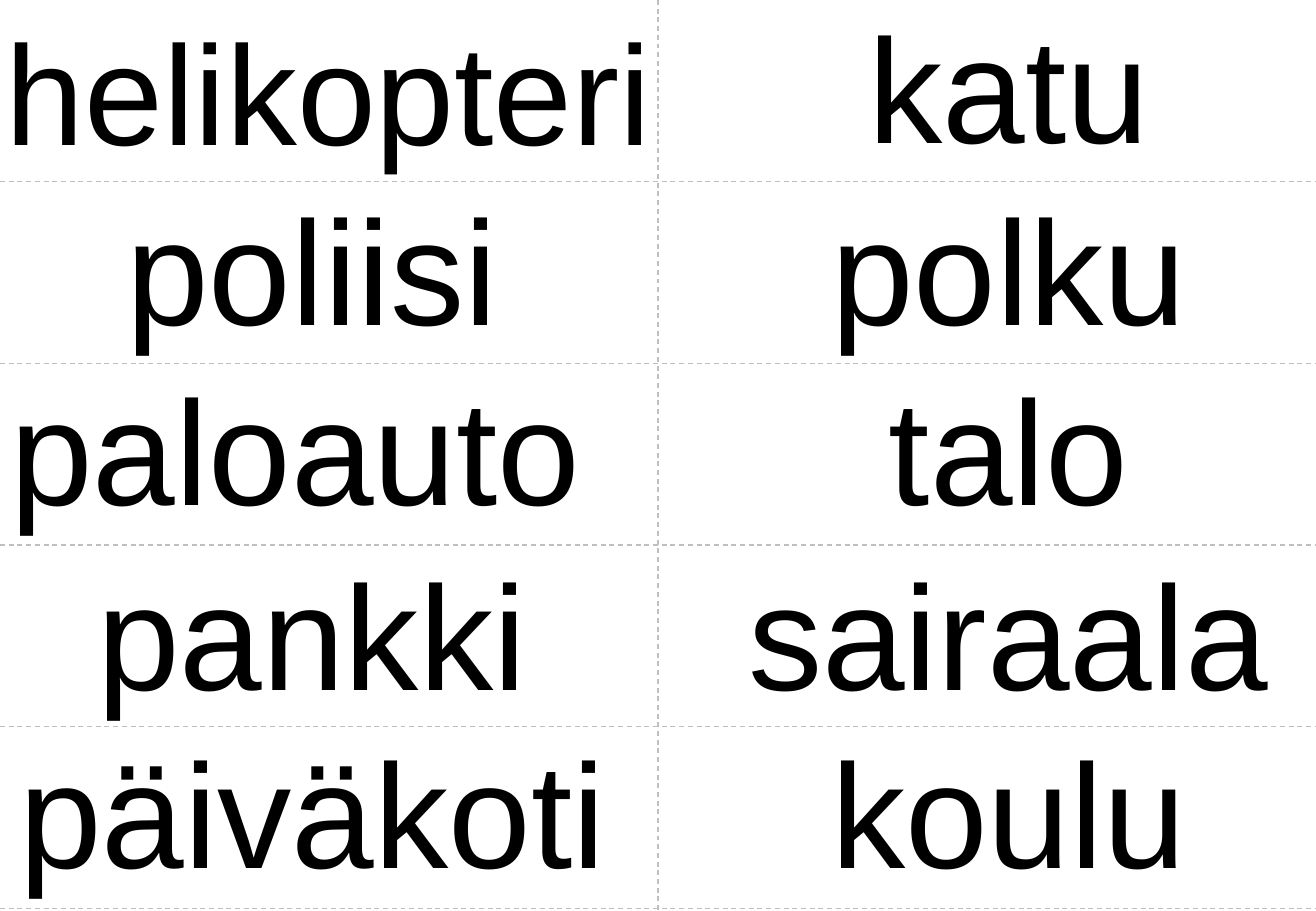
"""Build a sheet of ten Finnish word cards with dashed cutting lines."""
from typing import Any, NamedTuple

import pptx
import pptx.dml.color
import pptx.enum.dml
import pptx.enum.shapes
import pptx.enum.text
import pptx.oxml
import pptx.oxml.ns
import pptx.util

Inches = pptx.util.Inches

WIDE, HIGH = 10.83, 7.5
ROWS = 5
LAST = 7.48
TOPS = [-0.09, 1.41, 2.89, 4.41, 5.88]


class Card(NamedTuple):
    text: str
    left: float
    top: float
    width: float
    height: float = 1.48
    size: int = 88


class Cut(NamedTuple):
    x1: float
    y1: float
    x2: float
    y2: float


CARDS = [
    Card("helikopteri", -0.01, -0.02, 5.43, 1.41, 84),
    Card("poliisi", 0.98, TOPS[1], 3.17),
    Card("paloauto", 0.03, TOPS[2], 4.8),
    Card("pankki", 0.74, TOPS[3], 3.65),
    Card("päiväkoti", 0.1, TOPS[4], 4.94),
    Card("katu", 7.09, TOPS[0], 2.42),
    Card("polku", 6.78, TOPS[1], 3.04),
    Card("talo", 7.26, TOPS[2], 2.08),
    Card("sairaala", 6.1, TOPS[3], 4.39),
    Card("koulu", 6.78, TOPS[4], 3.04),
]
CUTS = [Cut(WIDE / 2, 0, WIDE / 2, HIGH)] + [
    Cut(0, LAST * row / ROWS, WIDE, LAST * row / ROWS)
    for row in range(1, ROWS + 1)
]


def paint(color: Any, tone: str) -> None:
    """Set a color format from a hex string."""
    color.rgb = pptx.dml.color.RGBColor.from_string(tone)


def add_card(slide: Any, card: Card) -> None:
    """Add one centred word."""
    box = slide.shapes.add_textbox(
        Inches(card.left), Inches(card.top),
        Inches(card.width), Inches(card.height))
    frame = box.text_frame
    frame.word_wrap = False
    frame.auto_size = pptx.enum.text.MSO_AUTO_SIZE.SHAPE_TO_FIT_TEXT
    frame.margin_left = frame.margin_right = Inches(0.05)
    frame.margin_top = frame.margin_bottom = Inches(0.05)
    para = frame.paragraphs[0]
    para.text = card.text
    para.alignment = pptx.enum.text.PP_ALIGN.CENTER
    para.font.name = "Arial"
    para.font.size = pptx.util.Pt(card.size)
    paint(para.font.color, "000000")


def add_cut(slide: Any, cut: Cut) -> None:
    """Add one dashed cutting line."""
    line = slide.shapes.add_connector(
        pptx.enum.shapes.MSO_CONNECTOR.STRAIGHT,
        Inches(cut.x1), Inches(cut.y1), Inches(cut.x2), Inches(cut.y2))
    paint(line.line.color, "BFBFBF")
    line.line.width = pptx.util.Pt(0.75)
    line.line.dash_style = pptx.enum.dml.MSO_LINE.DASH
    props = line._element.spPr
    props.append(pptx.oxml.parse_xml(
        f'<a:effectLst {pptx.oxml.ns.nsdecls("a")}/>'))


def main() -> None:
    """Draw the slide and save it."""
    deck = pptx.Presentation()
    deck.slide_width, deck.slide_height = Inches(WIDE), Inches(HIGH)
    slide = deck.slides.add_slide(deck.slide_layouts[6])
    for card in CARDS:
        add_card(slide, card)
    for cut in CUTS:
        add_cut(slide, cut)
    deck.save("out.pptx")


if __name__ == "__main__":
    main()
